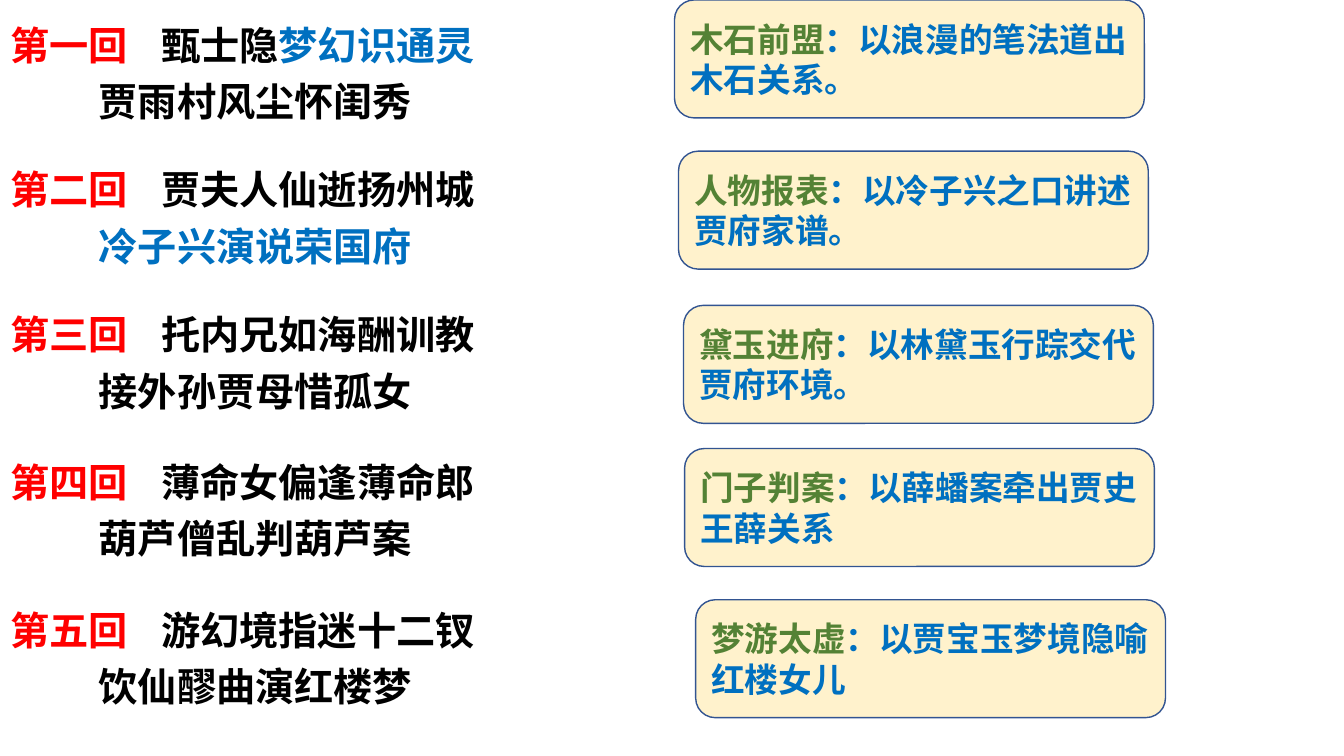
"""Build a slide of five chapter couplets, each with a summary card."""
import dataclasses
import typing

import lxml.etree
import pptx
import pptx.dml.color
import pptx.enum.shapes
import pptx.enum.text
import pptx.oxml.ns
import pptx.util

Inches = pptx.util.Inches
Pt = pptx.util.Pt
qn = pptx.oxml.ns.qn

FACE = "Noto Sans CJK SC"
RED, BLACK, BLUE, GREEN = "FF0000", "000000", "0070C0", "548235"
CREAM, NAVY = "FFF2CC", "325491"
TAB, INDENT = 1.54, 0.88
WIDTH, HEIGHT = 4.66, 1.17

Parts = list[tuple[str, str]]


@dataclasses.dataclass
class Chapter:
    label: str
    first: Parts
    second: Parts
    gap: int
    topic: str
    note: str
    left: float
    top: float


CHAPTERS = [
    Chapter("第一回", [("甄士隐", BLACK), ("梦幻识通灵", BLUE)],
            [("贾雨村风尘怀闺秀", BLACK)], 10,
            "木石前盟", "：以浪漫的笔法道出木石关系。", 6.69, 0),
    Chapter("第二回", [("贾夫人仙逝扬州城", BLACK)],
            [("冷子兴演说荣国府", BLUE)], 33,
            "人物报表", "：以冷子兴之口讲述贾府家谱。", 6.73, 1.5),
    Chapter("第三回", [("托内兄如海酬训教", BLACK)],
            [("接外孙贾母惜孤女", BLACK)], 33,
            "黛玉进府", "：以林黛玉行踪交代贾府环境。", 6.78, 3.03),
    Chapter("第四回", [("薄命女偏逢薄命郎", BLACK)],
            [("葫芦僧乱判葫芦案", BLACK)], 35,
            "门子判案", "：以薛蟠案牵出贾史王薛关系", 6.79, 4.45),
    Chapter("第五回", [("游幻境指迷十二钗", BLACK)],
            [("饮仙醪曲演红楼梦", BLACK)], 35,
            "梦游太虚", "：以贾宝玉梦境隐喻红楼女儿", 6.9, 5.95),
]


def apply(target: typing.Any, **values: typing.Any) -> None:
    """Set each named attribute on the target."""
    for name, value in values.items():
        setattr(target, name, value)


def tint(code: str) -> pptx.dml.color.RGBColor:
    """Turn a hex string into a colour."""
    return pptx.dml.color.RGBColor.from_string(code)


def write(para: typing.Any, parts: Parts, size: int) -> None:
    """Add bold coloured runs to a paragraph."""
    for text, code in parts:
        run = para.add_run()
        run.text = text
        apply(run.font, size=Pt(size), bold=True, name=FACE)
        run.font.color.rgb = tint(code)
        east = lxml.etree.SubElement(run.font._element, qn("a:ea"))
        east.set("typeface", FACE)


def verse(para: typing.Any, parts: Parts, left: float, gap: int) -> None:
    """Format and fill one line of a couplet."""
    apply(para, line_spacing=0.9, space_before=Pt(gap), space_after=Pt(0),
          alignment=pptx.enum.text.PP_ALIGN.LEFT)
    props = para._p.get_or_add_pPr()
    props.set("marL", str(Inches(left)))
    props.set("indent", "0")
    lxml.etree.SubElement(props, qn("a:buNone"))
    tabs = lxml.etree.SubElement(props, qn("a:tabLst"))
    lxml.etree.SubElement(tabs, qn("a:tab"), pos=str(Inches(TAB)), algn="l")
    write(para, parts, 28)


def card(slide: typing.Any, item: Chapter) -> None:
    """Draw the summary card of one chapter."""
    kind = pptx.enum.shapes.MSO_SHAPE.FLOWCHART_ALTERNATE_PROCESS
    shape = slide.shapes.add_shape(kind, Inches(item.left), Inches(item.top),
                                   Inches(WIDTH), Inches(HEIGHT))
    shape.shadow.inherit = False
    shape.fill.solid()
    shape.fill.fore_color.rgb = tint(CREAM)
    shape.line.color.rgb = tint(NAVY)
    shape.line.width = Pt(1)
    frame = shape.text_frame
    apply(frame, word_wrap=True,
          vertical_anchor=pptx.enum.text.MSO_ANCHOR.MIDDLE)
    para = frame.paragraphs[0]
    para.alignment = pptx.enum.text.PP_ALIGN.LEFT
    write(para, [(item.topic, GREEN), (item.note, BLUE)], 24)


def main() -> None:
    """Assemble and save the slide."""
    deck = pptx.Presentation()
    apply(deck, slide_width=Inches(13.33), slide_height=Inches(7.5))
    slide = deck.slides.add_slide(deck.slide_layouts[1])
    title, body = slide.placeholders
    title._element.getparent().remove(title._element)
    apply(body, left=Inches(0), top=Inches(0.21),
          width=Inches(12.65), height=Inches(7.24))
    frame = body.text_frame
    apply(frame, word_wrap=True,
          auto_size=pptx.enum.text.MSO_AUTO_SIZE.NONE,
          vertical_anchor=pptx.enum.text.MSO_ANCHOR.TOP)
    for index, item in enumerate(CHAPTERS):
        para = frame.add_paragraph() if index else frame.paragraphs[0]
        verse(para, [(item.label + "\t", RED), *item.first], 0, item.gap)
        verse(frame.add_paragraph(), item.second, INDENT, 10)
        card(slide, item)
    deck.save("out.pptx")


if __name__ == "__main__":
    main()
